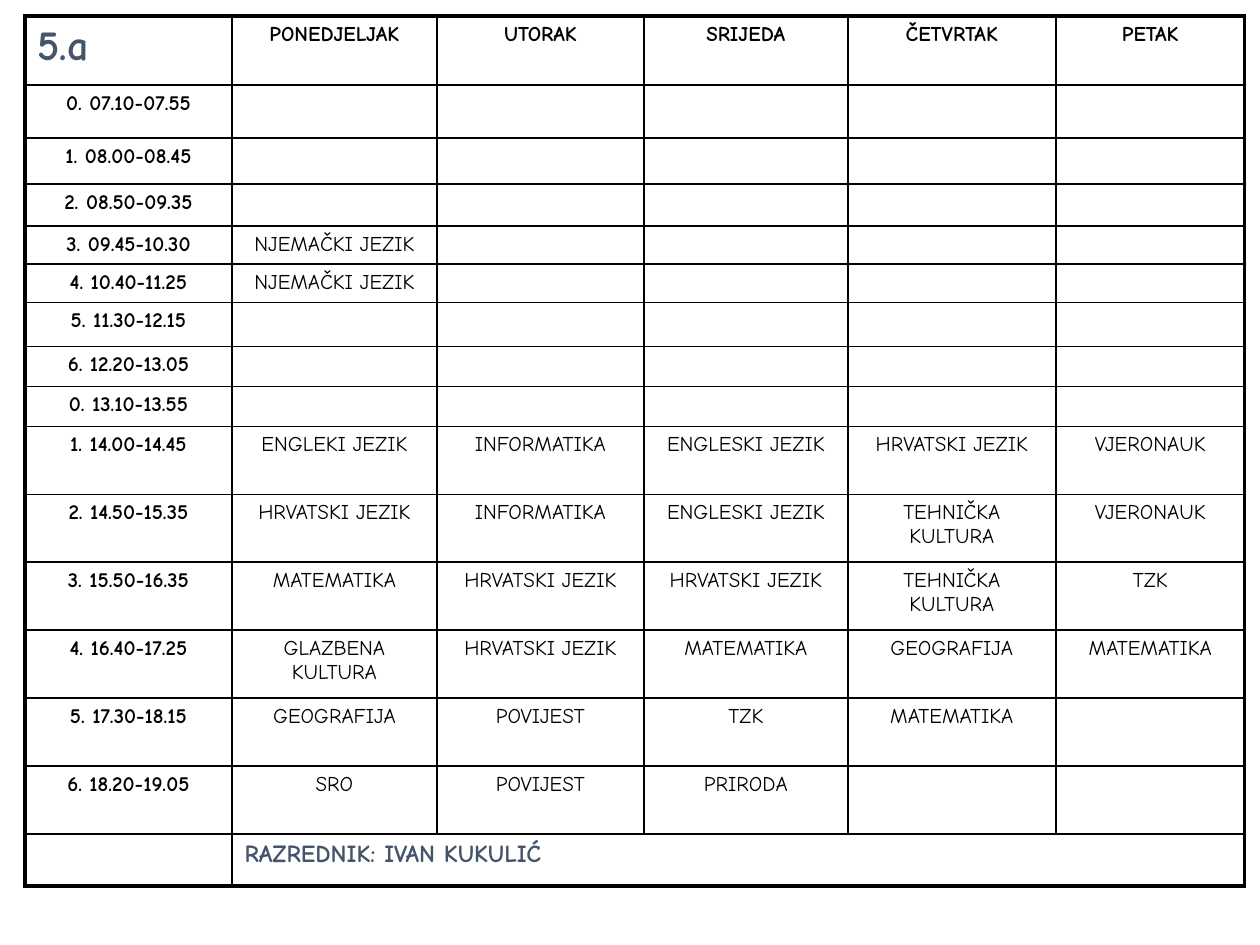
from lxml.etree import SubElement
from pptx import Presentation
from pptx.dml.color import RGBColor
from pptx.enum.text import PP_ALIGN
from pptx.oxml.ns import qn
from pptx.util import Pt

PX = 914400 // 126
COLORS = {"ink": "000000", "accent": "44546A"}
FONT = "Comic Neue"
THIN, THICK = 1, 2.25

# Formats: size, bold, colour and alignment
FORMATS = {
    "class": (24, True, "accent", PP_ALIGN.LEFT),
    "teacher": (14, True, "accent", PP_ALIGN.LEFT),
    "heading": (12, True, "ink", PP_ALIGN.CENTER),
    "subject": (12, False, "ink", PP_ALIGN.CENTER),
}

# Timetable: one list per row, missing cells stay empty
COLUMN_WIDTHS = [207, 205, 207, 204, 208, 189]
ROW_HEIGHTS = [69, 53, 46, 42, 38, 38, 44, 40, 40] + [68] * 6 + [52]
TIMETABLE = [
    ["5.a", "PONEDJELJAK", "UTORAK", "SRIJEDA", "ČETVRTAK", "PETAK"],
    ["0. 07.10-07.55"],
    ["1. 08.00-08.45"],
    ["2. 08.50-09.35"],
    ["3. 09.45-10.30", "NJEMAČKI JEZIK"],
    ["4. 10.40-11.25", "NJEMAČKI JEZIK"],
    ["5. 11.30-12.15"],
    ["6. 12.20-13.05"],
    ["0. 13.10-13.55"],
    ["1. 14.00-14.45", "ENGLEKI JEZIK", "INFORMATIKA", "ENGLESKI JEZIK", "HRVATSKI JEZIK", "VJERONAUK"],
    ["2. 14.50-15.35", "HRVATSKI JEZIK", "INFORMATIKA", "ENGLESKI JEZIK", "TEHNIČKA KULTURA", "VJERONAUK"],
    ["3. 15.50-16.35", "MATEMATIKA", "HRVATSKI JEZIK", "HRVATSKI JEZIK", "TEHNIČKA KULTURA", "TZK"],
    ["4. 16.40-17.25", "GLAZBENA KULTURA", "HRVATSKI JEZIK", "MATEMATIKA", "GEOGRAFIJA", "MATEMATIKA"],
    ["5. 17.30-18.15", "GEOGRAFIJA", "POVIJEST", "TZK", "MATEMATIKA"],
    ["6. 18.20-19.05", "SRO", "POVIJEST", "PRIRODA"],
    ["", "RAZREDNIK: IVAN KUKULIĆ"],
]


def set_borders(cell, widths):
    properties = cell._tc.get_or_add_tcPr()
    for side, width in widths.items():
        line = SubElement(properties, qn(f"a:ln{side}"), w=str(Pt(width)))
        fill = SubElement(line, qn("a:solidFill"))
        SubElement(fill, qn("a:srgbClr"), val=COLORS["ink"])


def write_text(cell, text, format_name):
    size, bold, color, alignment = FORMATS[format_name]
    paragraph = cell.text_frame.paragraphs[0]
    paragraph.alignment = alignment
    if not text:
        # The end mark keeps an empty row from growing
        SubElement(paragraph._p, qn("a:endParaRPr"), sz=str(size * 100))
        return
    run = paragraph.add_run()
    run.text = text
    for name, value in {"name": FONT, "size": Pt(size), "bold": bold}.items():
        setattr(run.font, name, value)
    run.font.color.rgb = RGBColor.from_string(COLORS[color])


# Slide
presentation = Presentation()
presentation.slide_width = 1260 * PX
presentation.slide_height = 945 * PX
slide = presentation.slides.add_slide(presentation.slide_layouts[6])

# Table grid
last_row, last_column = len(ROW_HEIGHTS) - 1, len(COLUMN_WIDTHS) - 1
table = slide.shapes.add_table(
    last_row + 1, last_column + 1, 25 * PX, 16 * PX,
    sum(COLUMN_WIDTHS) * PX, sum(ROW_HEIGHTS) * PX,
).table
table.first_row = table.horz_banding = False
for column, width in zip(table.columns, COLUMN_WIDTHS):
    column.width = width * PX
for row, height in zip(table.rows, ROW_HEIGHTS):
    row.height = height * PX
table.cell(last_row, 1).merge(table.cell(last_row, last_column))

# Cells: thick frame around a thin grid
for row_index, texts in enumerate(TIMETABLE):
    for column_index in range(last_column + 1):
        cell = table.cell(row_index, column_index)
        at_right = column_index == last_column or cell.is_merge_origin
        set_borders(cell, {
            "L": THICK if column_index == 0 else THIN,
            "R": THICK if at_right else THIN,
            "T": THICK if row_index == 0 else THIN,
            "B": THICK if row_index == last_row else THIN,
        })
        cell.fill.background()
        if row_index == column_index == 0:
            format_name = "class"
        elif cell.is_merge_origin:
            format_name = "teacher"
        elif row_index == 0 or column_index == 0:
            format_name = "heading"
        else:
            format_name = "subject"
        text = texts[column_index] if column_index < len(texts) else ""
        write_text(cell, text, format_name)

presentation.save("out.pptx")
